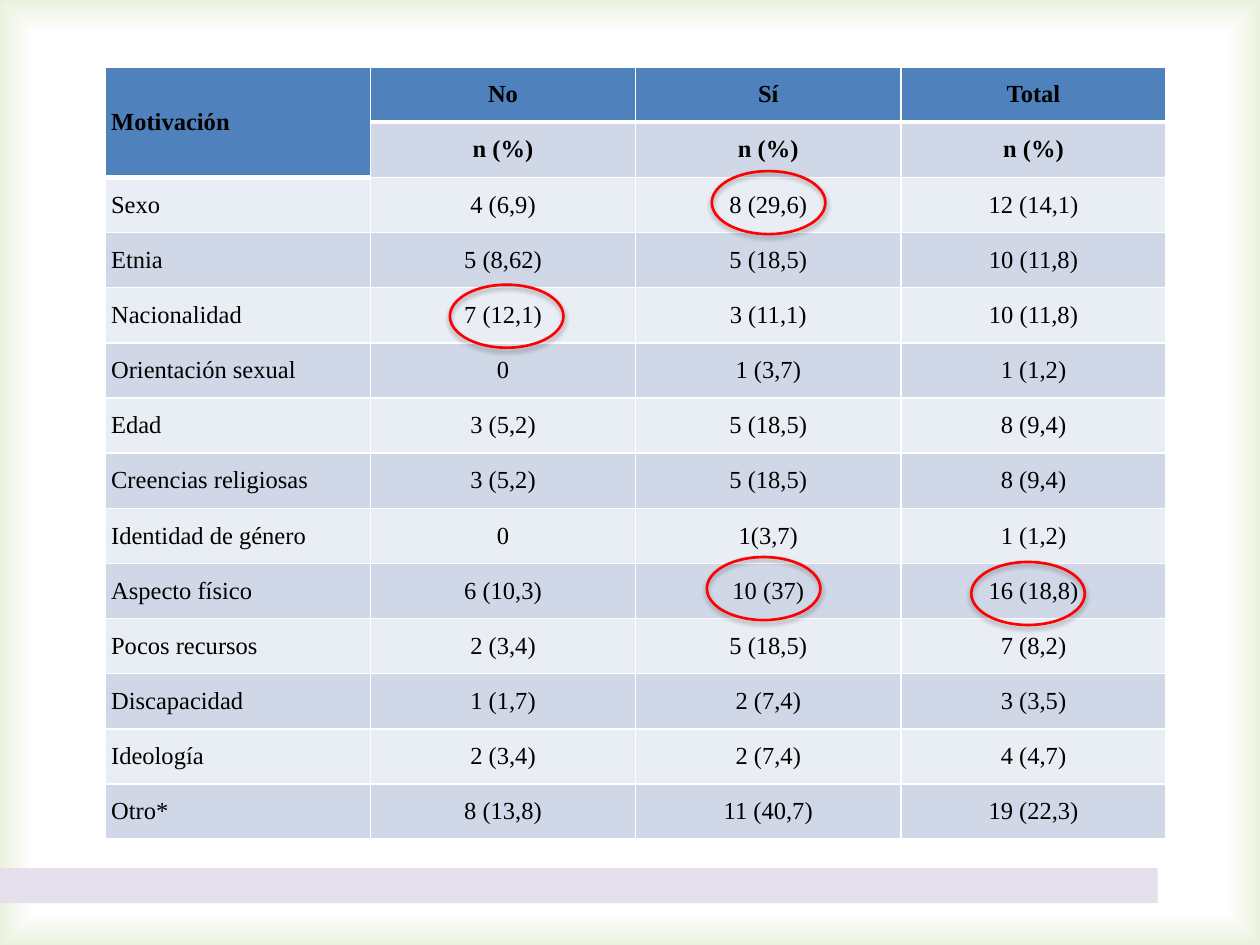
from typing import NamedTuple

from pptx import Presentation
from pptx.dml.color import RGBColor
from pptx.enum.shapes import MSO_SHAPE
from pptx.enum.text import MSO_ANCHOR, PP_ALIGN
from pptx.oxml import parse_xml
from pptx.oxml.ns import nsdecls
from pptx.util import Cm, Pt

RECTANGLE, OVAL = MSO_SHAPE.RECTANGLE, MSO_SHAPE.OVAL
MIDDLE = MSO_ANCHOR.MIDDLE
LEFT, CENTER = PP_ALIGN.LEFT, PP_ALIGN.CENTER

BLACK = RGBColor(0x00, 0x00, 0x00)
WHITE = RGBColor(0xFF, 0xFF, 0xFF)
RED = RGBColor(0xFF, 0x00, 0x00)
BLUE = RGBColor(0x4F, 0x81, 0xBD)
DARK_BAND = RGBColor(0xD0, 0xD8, 0xE8)
LIGHT_BAND = RGBColor(0xE9, 0xED, 0xF4)
LILAC = RGBColor(0xE6, 0xE0, 0xEC)
PALE_GREEN = RGBColor(0xEB, 0xF1, 0xDE)

FONT = "Times New Roman"
HEADER_ROWS = 2


class Row(NamedTuple):
    label: str
    no: str
    yes: str
    total: str


class Highlight(NamedTuple):
    left: float
    top: float


ROWS = [
    Row("Motivación", "No", "Sí", "Total"),
    Row("", "n (%)", "n (%)", "n (%)"),
    Row("Sexo", "4 (6,9)", "8 (29,6)", "12 (14,1)"),
    Row("Etnia", "5 (8,62)", "5 (18,5)", "10 (11,8)"),
    Row("Nacionalidad", "7 (12,1)", "3 (11,1)", "10 (11,8)"),
    Row("Orientación sexual", "0", "1 (3,7)", "1 (1,2)"),
    Row("Edad", "3 (5,2)", "5 (18,5)", "8 (9,4)"),
    Row("Creencias religiosas", "3 (5,2)", "5 (18,5)", "8 (9,4)"),
    Row("Identidad de género", "0", "1(3,7)", "1 (1,2)"),
    Row("Aspecto físico", "6 (10,3)", "10 (37)", "16 (18,8)"),
    Row("Pocos recursos", "2 (3,4)", "5 (18,5)", "7 (8,2)"),
    Row("Discapacidad", "1 (1,7)", "2 (7,4)", "3 (3,5)"),
    Row("Ideología", "2 (3,4)", "2 (7,4)", "4 (4,7)"),
    Row("Otro*", "8 (13,8)", "11 (40,7)", "19 (22,3)"),
]

HIGHLIGHTS = [
    Highlight(14.35, 3.45),
    Highlight(19.58, 11.33),
    Highlight(14.25, 11.23),
    Highlight(9.07, 5.74),
]


def set_background(s) -> None:
    s.element.cSld.insert(0, parse_xml(
        f'<p:bg {nsdecls("p", "a")}><p:bgPr><a:gradFill rotWithShape="1"><a:gsLst>'
        f'<a:gs pos="93000"><a:srgbClr val="{WHITE}"><a:alpha val="70000"/></a:srgbClr></a:gs>'
        f'<a:gs pos="100000"><a:srgbClr val="{PALE_GREEN}"/></a:gs></a:gsLst>'
        '<a:path path="rect"><a:fillToRect l="50000" t="50000" r="50000" b="50000"/></a:path>'
        '</a:gradFill><a:effectLst/></p:bgPr></p:bg>'))


def add_footer_band(s) -> None:
    sp = s.shapes.add_shape(RECTANGLE, 0, Cm(17.5), Cm(23.34), Cm(0.71))
    sp.shadow.inherit = False
    sp.fill.solid()
    sp.fill.fore_color.rgb = LILAC
    sp.line.fill.background()


def set_borders(cell, top: float, bottom: float) -> None:
    tc_pr = cell._tc.get_or_add_tcPr()
    sides = [("lnL", 1), ("lnR", 1), ("lnT", top), ("lnB", bottom)]
    for i, (side, width) in enumerate(sides):
        tc_pr.insert(i, parse_xml(
            f'<a:{side} {nsdecls("a")} w="{Pt(width)}"><a:solidFill>'
            f'<a:srgbClr val="{WHITE}"/></a:solidFill></a:{side}>'))


def fill_cell(cell, text: str, row: int, col: int) -> None:
    is_header = row == 0 or (row < HEADER_ROWS and col == 0)
    header_end = HEADER_ROWS if col == 0 else 1
    cell.fill.solid()
    cell.fill.fore_color.rgb = BLUE if is_header else DARK_BAND if row % 2 else LIGHT_BAND
    set_borders(cell, 3 if row == header_end else 1, 3 if is_header else 1)
    cell.vertical_anchor = MIDDLE
    cell.margin_left = cell.margin_right = Cm(0.12)
    cell.margin_top = cell.margin_bottom = 0
    cell.text_frame.text = text
    p = cell.text_frame.paragraphs[0]
    p.alignment = CENTER if col else LEFT
    p.font.size = Pt(14)
    for r in p.runs:
        r.font.name = FONT
        r.font.size = Pt(14)
        r.font.bold = row < HEADER_ROWS
        r.font.color.rgb = BLACK


def add_motivation_table(s, rows: list[Row]) -> None:
    table = s.shapes.add_table(len(rows), len(Row._fields),
                               Cm(2.12), Cm(1.35), Cm(21.39), Cm(15.57)).table
    for i, row in enumerate(rows):
        for j, text in enumerate(row):
            fill_cell(table.cell(i, j), text, i, j)
    table.cell(0, 0).merge(table.cell(HEADER_ROWS - 1, 0))


def add_highlight(s, mark: Highlight) -> None:
    sp = s.shapes.add_shape(OVAL, Cm(mark.left), Cm(mark.top), Cm(2.29), Cm(1.27))
    sp.fill.background()
    sp.line.color.rgb = RED
    sp.line.width = Pt(1.5)
    sp.shadow.inherit = False
    sp._element.spPr.find("{*}effectLst").append(parse_xml(
        f'<a:outerShdw {nsdecls("a")} blurRad="{Pt(3.1)}" dist="{Pt(1.8)}" dir="5400000" '
        f'rotWithShape="0"><a:srgbClr val="{BLACK}"><a:alpha val="35000"/></a:srgbClr>'
        '</a:outerShdw>'))


def main() -> None:
    prs = Presentation()
    prs.slide_width, prs.slide_height = Cm(25.4), Cm(19.05)
    s = prs.slides.add_slide(prs.slide_layouts[6])
    set_background(s)
    add_footer_band(s)
    add_motivation_table(s, ROWS)
    for mark in HIGHLIGHTS:
        add_highlight(s, mark)
    prs.save("out.pptx")


if __name__ == "__main__":
    main()
